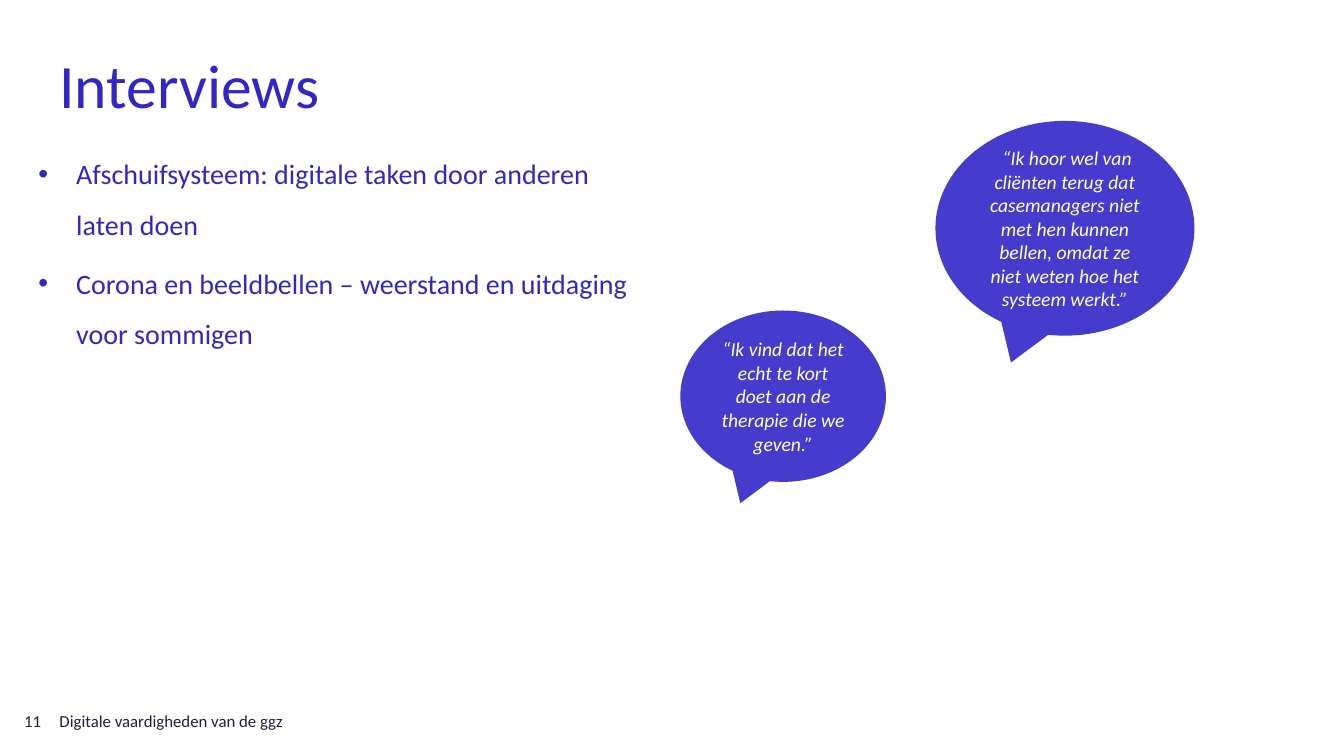
from dataclasses import dataclass

from lxml.etree import SubElement
from pptx import Presentation
from pptx.dml.color import RGBColor
from pptx.enum.shapes import MSO_SHAPE
from pptx.enum.text import MSO_ANCHOR, PP_ALIGN
from pptx.oxml.ns import qn
from pptx.slide import Slide
from pptx.text.text import TextFrame, _Paragraph
from pptx.util import Pt

COLORS = {"indigo": "3127C8", "navy": "1B213E", "white": "FFFFFF"}
FONT = "Calibri"
BULLET_INDENT = 27
BUBBLE_OPACITY = 90


@dataclass(frozen=True)
class Box:
    left: float
    top: float
    width: float
    height: float

    def lengths(self) -> tuple[Pt, Pt, Pt, Pt]:
        return Pt(self.left), Pt(self.top), Pt(self.width), Pt(self.height)


@dataclass(frozen=True)
class Label:
    text: str
    box: Box
    size: float
    color: str


@dataclass(frozen=True)
class Quote:
    text: str
    box: Box


LABELS = [
    Label("Interviews", Box(42.5, 15.1, 874.8, 90), 44, "indigo"),
    Label("Digitale vaardigheden van de ggz", Box(42.5, 500.4, 303.8, 28.8), 12, "navy"),
    Label("11", Box(17.3, 500.4, 20.2, 28.8), 12, "navy"),
]

FINDINGS_BOX = Box(27.4, 100.1, 422.6, 154.1)
FINDINGS = [
    "Afschuifsysteem: digitale taken door anderen laten doen",
    "Corona en beeldbellen – weerstand en uitdaging voor sommigen",
]

QUOTES = [
    Quote(
        "“Ik vind dat het echt te kort doet aan de therapie die we geven.”",
        Box(486, 221.8, 146.9, 122.4),
    ),
    Quote(
        " “Ik hoor wel van cliënten terug dat casemanagers niet met hen kunnen "
        "bellen, omdat ze niet weten hoe het systeem werkt.”",
        Box(668.2, 86.4, 185, 153.4),
    ),
]


def add_run(paragraph: _Paragraph, text: str, size: float, color: str,
            italic: bool = False) -> None:
    run = paragraph.add_run()
    run.text = text
    run.font.name = FONT
    run.font.size = Pt(size)
    run.font.italic = italic
    run.font.color.rgb = RGBColor.from_string(COLORS[color])


def add_text_area(slide: Slide, box: Box, anchor: MSO_ANCHOR) -> TextFrame:
    frame = slide.shapes.add_textbox(*box.lengths()).text_frame
    frame.word_wrap = True
    frame.vertical_anchor = anchor
    frame.margin_left = frame.margin_right = Pt(0)
    frame.margin_top = frame.margin_bottom = Pt(0)
    return frame


def add_label(slide: Slide, label: Label) -> None:
    frame = add_text_area(slide, label.box, MSO_ANCHOR.MIDDLE)
    add_run(frame.paragraphs[0], label.text, label.size, label.color)


def set_bullet(paragraph: _Paragraph) -> None:
    properties = paragraph._p.get_or_add_pPr()
    properties.set("marL", str(Pt(BULLET_INDENT)))
    properties.set("indent", str(-Pt(BULLET_INDENT)))
    SubElement(properties, qn("a:buFont"), typeface="Arial")
    SubElement(properties, qn("a:buChar"), char="•")


def add_findings(slide: Slide, findings: list[str]) -> None:
    frame = add_text_area(slide, FINDINGS_BOX, MSO_ANCHOR.TOP)
    for index, finding in enumerate(findings):
        paragraph = frame.add_paragraph() if index else frame.paragraphs[0]
        set_bullet(paragraph)
        paragraph.line_spacing = Pt(36)
        paragraph.space_after = Pt(6)
        add_run(paragraph, finding, 20, "indigo")


def add_quote(slide: Slide, quote: Quote) -> None:
    bubble = slide.shapes.add_shape(MSO_SHAPE.OVAL_CALLOUT, *quote.box.lengths())
    bubble.shadow.inherit = False
    bubble.line.fill.background()
    bubble.fill.solid()
    bubble.fill.fore_color.rgb = RGBColor.from_string(COLORS["indigo"])
    fill_color = bubble._element.spPr.find(qn("a:solidFill")).find(qn("a:srgbClr"))
    SubElement(fill_color, qn("a:alpha"), val=str(BUBBLE_OPACITY * 1000))

    frame = bubble.text_frame
    frame.word_wrap = True
    frame.vertical_anchor = MSO_ANCHOR.MIDDLE
    paragraph = frame.paragraphs[0]
    paragraph.alignment = PP_ALIGN.CENTER
    add_run(paragraph, quote.text, 14, "white", italic=True)


def main() -> None:
    presentation = Presentation()
    presentation.slide_width = Pt(960)
    presentation.slide_height = Pt(540)
    slide = presentation.slides.add_slide(presentation.slide_layouts[6])

    # Title and footer
    for label in LABELS:
        add_label(slide, label)

    # Interview findings
    add_findings(slide, FINDINGS)

    # Speech bubbles
    for quote in QUOTES:
        add_quote(slide, quote)

    presentation.save("out.pptx")


if __name__ == "__main__":
    main()
